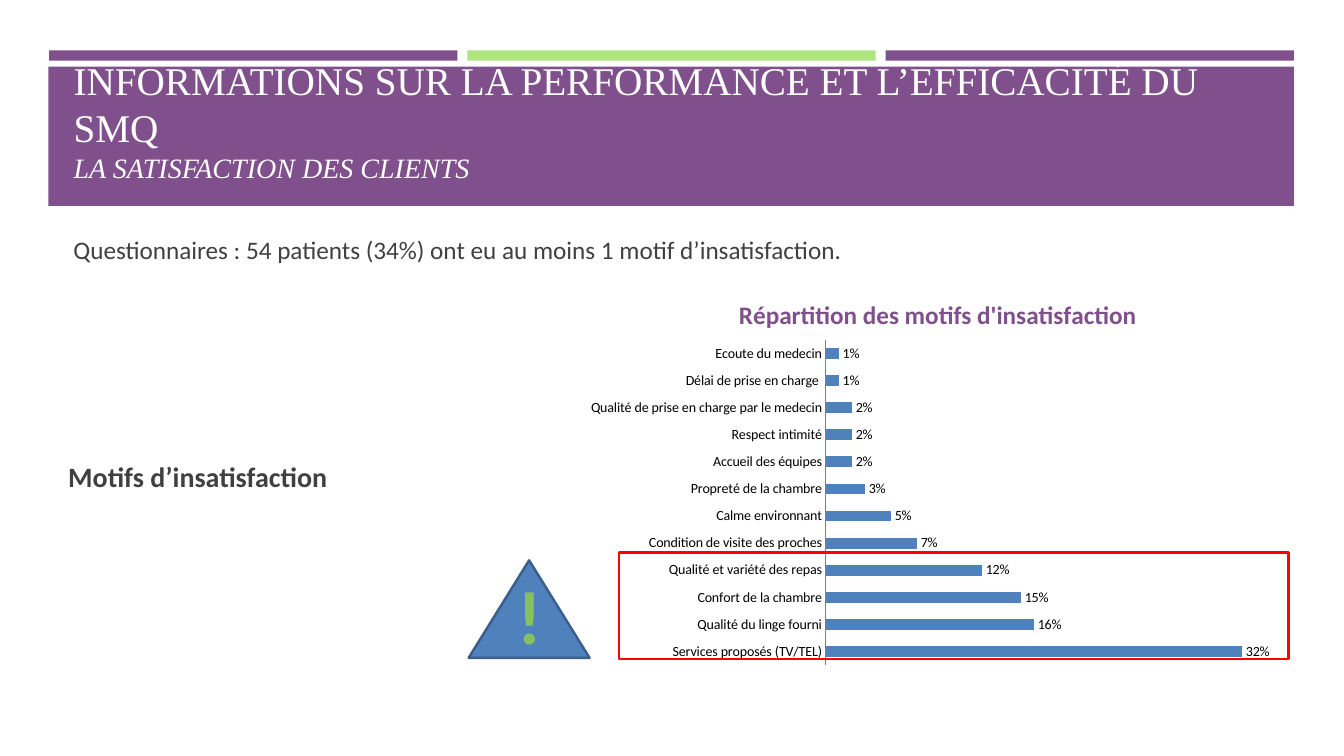
from lxml import etree
from pptx import Presentation
from pptx import util as u
from pptx.chart.data import CategoryChartData
from pptx.dml.color import RGBColor
from pptx.enum import chart as ch, shapes, text
from pptx.oxml import parse_xml
from pptx.oxml.ns import nsdecls

# Content
HEADING = "INFORMATIONS SUR LA PERFORMANCE ET L’EFFICACITÉ DU SMQ"
SUBHEADING = "LA SATISFACTION DES CLIENTS"
FINDING = "Questionnaires : 54 patients (34%) ont eu au moins 1 motif d’insatisfaction."
TOPIC = "Motifs d’insatisfaction"
CHART_TITLE = "Répartition des motifs d'insatisfaction"
REASONS = [
    ("Services proposés (TV/TEL)", 0.32),
    ("Qualité du linge fourni", 0.16),
    ("Confort de la chambre", 0.15),
    ("Qualité et variété des repas", 0.12),
    ("Condition de visite des proches", 0.07),
    ("Calme environnant", 0.05),
    ("Propreté de la chambre", 0.03),
    ("Accueil des équipes", 0.02),
    ("Respect intimité", 0.02),
    ("Qualité de prise en charge par le medecin", 0.02),
    ("Délai de prise en charge ", 0.01),
    ("Ecoute du medecin", 0.01),
]


class Theme:
    purple, lime, white = "7F508B", "ADE67F", "FFFFFF"
    ink, black, axis = "404040", "000000", "808080"
    blue, navy, red, green = "4F81BD", "3A5F8C", "FF0000", "85C15F"
    serif, sans = "Times New Roman", "Calibri"
    heading, topic, body, label, mark = 28, 20, 18, 10, 54
    stroke = 1.75


def rgb(value):
    return RGBColor.from_string(value)


def box(*lengths):
    return [u.Cm(n) for n in lengths]


def style(font, size, color, face=Theme.sans, bold=False, italic=False):
    font.size, font.name = u.Pt(size), face
    font.bold, font.italic = bold, italic
    font.color.rgb = rgb(color)


def write(paragraph, words, **look):
    run = paragraph.add_run()
    run.text = words
    style(run.font, **look)


def add_text(area, words, wrap=True, align=text.PP_ALIGN.LEFT, **look):
    frame = slide.shapes.add_textbox(*box(*area)).text_frame
    frame.word_wrap = wrap
    frame.auto_size = text.MSO_AUTO_SIZE.SHAPE_TO_FIT_TEXT
    frame.paragraphs[0].alignment = align
    write(frame.paragraphs[0], words, **look)


def add_block(kind, area, fill=None, line=None):
    block = slide.shapes.add_shape(kind, *box(*area))
    block.shadow.inherit = False
    if fill:
        block.fill.solid()
        block.fill.fore_color.rgb = rgb(fill)
    else:
        block.fill.background()
    if line:
        block.line.color.rgb = rgb(line)
        block.line.width = u.Pt(Theme.stroke)
    else:
        block.line.fill.background()


deck = Presentation()
deck.slide_width, deck.slide_height = box(33.87, 19.05)
slide = deck.slides.add_slide(deck.slide_layouts[5])
RECT = shapes.MSO_SHAPE.RECTANGLE

# Header stripes and band
for i, color in enumerate((Theme.purple, Theme.lime, Theme.purple)):
    add_block(RECT, (1.24 + i * 10.54, 1.27, 10.29, 0.26), color)
add_block(RECT, (1.22, 1.68, 31.39, 3.51), Theme.purple)

# Title, brought in front of the band
title = slide.shapes.title
slide.shapes._spTree.append(title._element)
title.left, title.top, title.width, title.height = box(1.6, 2.03, 30.63, 2.74)
title.text_frame.auto_size = text.MSO_AUTO_SIZE.NONE
title.text_frame.word_wrap = True
title.text_frame.vertical_anchor = text.MSO_ANCHOR.BOTTOM
heading = title.text_frame.paragraphs[0]
heading.alignment = text.PP_ALIGN.LEFT
write(heading, HEADING, size=Theme.heading, color=Theme.white, face=Theme.serif)
heading.add_line_break()
write(heading, SUBHEADING, size=Theme.topic, color=Theme.white,
      face=Theme.serif, italic=True)

# Chart of reasons
data = CategoryChartData(number_format="0%")
data.categories = [reason for reason, _ in REASONS]
data.add_series("Series 1", [share for _, share in REASONS])
chart = slide.shapes.add_chart(ch.XL_CHART_TYPE.BAR_CLUSTERED,
                               *box(14.53, 7.04, 18.21, 9.93), data).chart
style(chart.font, Theme.label, Theme.black)
chart.has_legend = False
chart.has_title = True
write(chart.chart_title.text_frame.paragraphs[0], CHART_TITLE,
      size=Theme.body, color=Theme.purple, bold=True)
chart.chart_title.include_in_layout = False

reason_axis, share_axis = chart.category_axis, chart.value_axis
reason_axis.major_tick_mark = ch.XL_TICK_MARK.NONE
reason_axis.format.line.color.rgb = rgb(Theme.axis)
share_axis.has_major_gridlines = False
share_axis.minimum_scale, share_axis.maximum_scale = 0, 0.35
share_axis.tick_labels.number_format = "0%"
share_axis.tick_labels.number_format_is_linked = False
share_axis.visible = False

bars = chart.plots[0]
bars.gap_width, bars.overlap = 150, -25
bars.vary_by_categories = False
bars.series[0].format.fill.solid()
bars.series[0].format.fill.fore_color.rgb = rgb(Theme.blue)
labels = bars.series[0].data_labels
labels.show_value = True
labels.number_format, labels.number_format_is_linked = "0%", False
labels.position = ch.XL_LABEL_POSITION.OUTSIDE_END
style(labels.font, Theme.label, Theme.black)

# Fixed inner plot area, as shares of the chart
plot_area = chart._chartSpace.chart.plotArea
for old in plot_area.findall("{*}layout"):
    plot_area.remove(old)
layout = parse_xml(f"<c:layout {nsdecls('c')}><c:manualLayout/></c:layout>")
places = [("layoutTarget", "inner"), ("xMode", "edge"), ("yMode", "edge"),
          ("x", 0.345), ("y", 0.154), ("w", 0.63), ("h", 0.825)]
for tag, value in places:
    name = etree.QName(layout.nsmap["c"], tag)
    etree.SubElement(layout[0], name).set("val", str(value))
plot_area.insert(0, layout)

# Statements
add_text((1.6, 5.77, 30.23, 1.02), FINDING, size=Theme.body, color=Theme.ink)
add_text((1.47, 11.46, 7.75, 1.12), TOPIC, size=Theme.topic, color=Theme.ink,
         bold=True)

# Main reasons: frame and warning sign
add_block(RECT, (15.6, 13.92, 16.87, 2.69), line=Theme.red)
add_block(shapes.MSO_SHAPE.ISOSCELES_TRIANGLE, (11.81, 14.12, 3.05, 2.46),
          Theme.blue, Theme.navy)
add_text((12.78, 14.22, 1.17, 2.57), "!", wrap=False,
         align=text.PP_ALIGN.CENTER, size=Theme.mark, color=Theme.green, bold=True)

deck.save("out.pptx")
